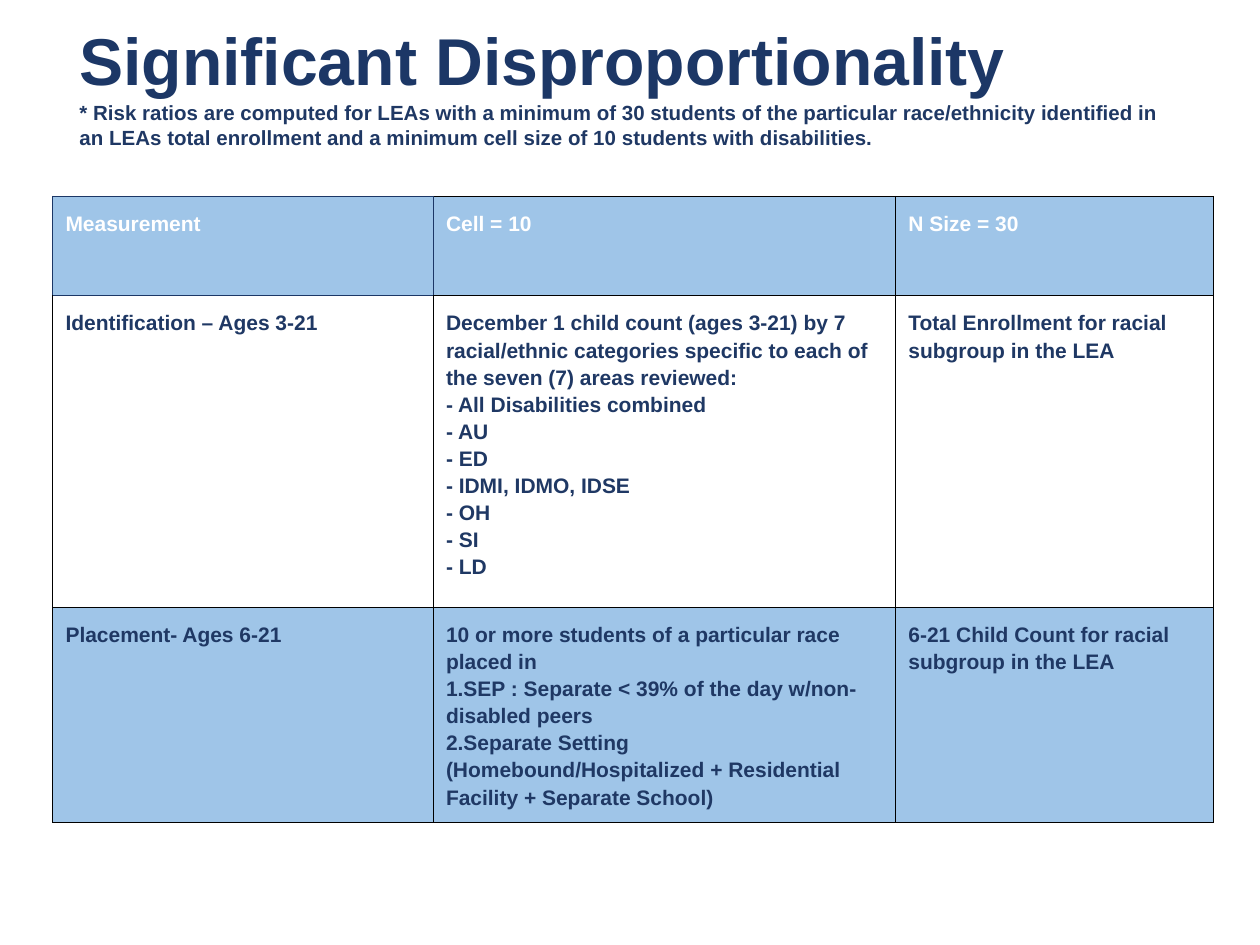
from pptx import Presentation
from pptx.dml.color import RGBColor as Rgb
from pptx.enum.text import MSO_ANCHOR as Anchor, MSO_AUTO_SIZE as Fit, PP_ALIGN as Align
from pptx.oxml import parse_xml
from pptx.oxml.ns import nsdecls
from pptx.util import Inches, Pt

NAVY = Rgb(0x1C, 0x37, 0x66)
INK = Rgb(0x1F, 0x38, 0x64)
SKY = Rgb(0x9F, 0xC5, 0xE8)
WHITE = Rgb(0xFF, 0xFF, 0xFF)
BLACK = Rgb(0, 0, 0)

WIDE, HIGH = Inches(10), Inches(7.5)
COLS = (0.302, 0.367, 0.252)
ROWS = (0.105, 0.33, 0.218)
PAD = Inches(0.1)

HEAD = "Significant Disproportionality"
NOTE = ("* Risk ratios are computed for LEAs with a minimum of 30 students of the "
        "particular race/ethnicity identified in an LEAs total enrollment and a "
        "minimum cell size of 10 students with disabilities.")
CELLS = (
    (("Measurement",), ("Cell = 10",), ("N Size = 30",)),
    (("Identification – Ages 3-21",),
     ("December 1 child count (ages 3-21) by 7 racial/ethnic categories specific "
      "to each of the seven (7) areas reviewed:",
      "- All Disabilities combined", "- AU", "- ED", "- IDMI, IDMO, IDSE",
      "- OH", "- SI", "- LD"),
     ("Total Enrollment for racial subgroup in the LEA",)),
    (("Placement- Ages 6-21",),
     ("10 or more students of a particular race placed in",
      "1.SEP : Separate < 39% of the day w/non-disabled peers",
      "2.Separate Setting (Homebound/Hospitalized + Residential Facility + "
      "Separate School)"),
     ("6-21 Child Count for racial subgroup in the LEA",)),
)


def style(para, size, color, gap):
    para.alignment = Align.LEFT
    para.line_spacing = gap
    para.space_before = para.space_after = Pt(0)
    font = para.font
    font.name, font.size, font.bold = "Arial", Pt(size), True
    font.color.rgb = color


def write(frame, lines, size, color, gap):
    for num, line in enumerate(lines):
        para = frame.paragraphs[0] if num == 0 else frame.add_paragraph()
        para.text = line
        style(para, size, color, gap)


def add_title(slide):
    title = slide.shapes.title
    title.left, title.top = int(WIDE * 0.053), int(HIGH * 0.017)
    title.width, title.height = int(WIDE * 0.878), int(HIGH * 0.223)
    frame = title.text_frame
    frame.word_wrap, frame.auto_size = True, Fit.NONE
    frame.vertical_anchor = Anchor.TOP
    frame.margin_left = frame.margin_right = frame.margin_top = PAD
    write(frame, (HEAD, NOTE), 37.8, NAVY, 0.9)
    style(frame.paragraphs[1], 11.7, INK, 1.0)


def add_edges(cell, colors):
    props = cell._tc.get_or_add_tcPr()
    for num, (side, color) in enumerate(zip("LRTB", colors)):
        props.insert(num, parse_xml(
            f'<a:ln{side} {nsdecls("a")} w="{Pt(0.75)}"><a:solidFill>'
            f'<a:srgbClr val="{color}"/></a:solidFill></a:ln{side}>'))


def edge_colors(row, col):
    if (row, col) == (0, 0):
        return (NAVY,) * 4
    left = NAVY if (row, col) == (0, 1) else BLACK
    top = NAVY if (row, col) == (1, 0) else BLACK
    return left, BLACK, top, BLACK


def fill_cell(cell, row, col):
    cell.margin_left = cell.margin_right = PAD
    cell.margin_top = cell.margin_bottom = PAD
    cell.vertical_anchor = Anchor.TOP
    cell.fill.solid()
    cell.fill.fore_color.rgb = WHITE if row % 2 else SKY
    write(cell.text_frame, CELLS[row][col], 12, INK if row else WHITE, 1.15)
    add_edges(cell, edge_colors(row, col))


def add_grid(slide):
    grid = slide.shapes.add_table(
        len(ROWS), len(COLS), int(WIDE * 0.042), int(HIGH * 0.208),
        int(WIDE * sum(COLS)), int(HIGH * sum(ROWS))).table
    for col, share in zip(grid.columns, COLS):
        col.width = int(WIDE * share)
    for row, share in zip(grid.rows, ROWS):
        row.height = int(HIGH * share)
    for row in range(len(ROWS)):
        for col in range(len(COLS)):
            fill_cell(grid.cell(row, col), row, col)


def main():
    deck = Presentation()
    deck.slide_width, deck.slide_height = WIDE, HIGH
    slide = deck.slides.add_slide(deck.slide_layouts[5])
    add_title(slide)
    add_grid(slide)
    deck.save("out.pptx")


if __name__ == "__main__":
    main()
